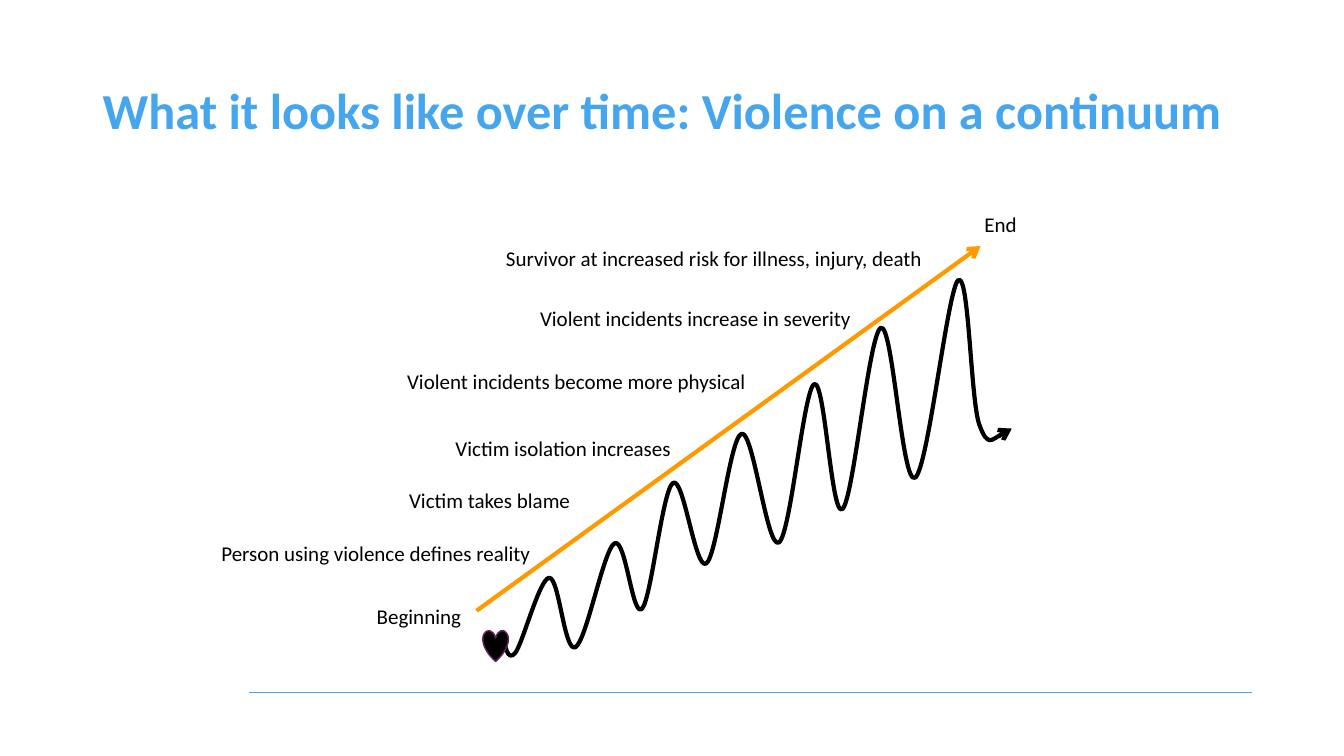
from dataclasses import dataclass

from lxml import etree
from pptx import Presentation
from pptx.dml.color import RGBColor
from pptx.enum.shapes import MSO_CONNECTOR, MSO_SHAPE
from pptx.enum.text import MSO_ANCHOR, MSO_AUTO_SIZE, PP_ALIGN
from pptx.oxml.ns import qn
from pptx.util import Cm, Pt

STRAIGHT = MSO_CONNECTOR.STRAIGHT
HEART = MSO_SHAPE.HEART
MIDDLE = MSO_ANCHOR.MIDDLE
FIT_SHAPE = MSO_AUTO_SIZE.SHAPE_TO_FIT_TEXT
LEFT, RIGHT = PP_ALIGN.LEFT, PP_ALIGN.RIGHT


@dataclass(frozen=True)
class Theme:
    font: str = "Calibri"
    title_size: float = 36
    label_size: float = 15
    rule_width: float = 0.5
    heart_width: float = 1
    curve_width: float = 3
    blue: RGBColor = RGBColor(0x45, 0xA5, 0xED)
    orange: RGBColor = RGBColor(0xFF, 0x99, 0x00)
    black: RGBColor = RGBColor(0x00, 0x00, 0x00)
    purple: RGBColor = RGBColor(0x6C, 0x1D, 0x6A)


THEME = Theme()

# Boxes are left, top, width, height in centimetres
TITLE_BOX = (2.34, 1.02, 29.21, 3.68)
DIAGRAM_BOX = (5.33, 5.21, 20.65, 11.46)
RULE_BOX = (6.27, 17.45, 25.27, 0)
LABEL_HEIGHT = 0.89

# Stages: text, then left, top and width inside the diagram
STAGES = [
    ("Survivor at increased risk for illness, injury, death", 7.17, 0.84, 11.13),
    ("Violent incidents increase in severity", 8.03, 2.36, 8.43),
    ("Violent incidents become more physical", 4.68, 3.96, 9.14),
    ("Victim isolation increases", 5.9, 5.64, 6.02),
    ("Victim takes blame", 4.73, 6.96, 4.62),
    ("Person using violence defines reality", 0, 8.28, 8.38),
]

# Turning points of the wave: x, y, then the reach of the handle on each side
WAVE = [
    (7.32, 10.67, 0.07, 0.4), (7.65, 11.25, 0.19, -0.22),
    (8.51, 9.35, 0.25, -0.03), (9.17, 11.1, 0.28, -0.14),
    (10.16, 8.48, 0.28, -0.15), (10.85, 10.13, 0.24, -0.26),
    (11.63, 6.96, 0.27, -0.19), (12.47, 8.99, 0.28, -0.2),
    (13.36, 5.72, 0.3, -0.09), (14.3, 8.46, 0.3, -0.2),
    (15.19, 4.47, 0.27, -0.14), (15.9, 7.62, 0.28, -0.23),
    (16.87, 3.05, 0.3, -0.13), (17.73, 6.83, 0.33, -0.2),
    (18.82, 1.85, 0.27, -0.21), (19.35, 5.49, 0.22, 0.62),
    (20.17, 5.59, 0, 0),
]


def add_text(page, text, box, size, color, bold=False, align=LEFT):
    shape = page.shapes.add_textbox(*map(Cm, box))
    shape.text_frame.text = text
    para = shape.text_frame.paragraphs[0]
    para.alignment = align
    font = para.runs[0].font
    font.name, font.size, font.bold = THEME.font, Pt(size), bold
    font.color.rgb = color
    return shape


def add_label(page, text, box, wrap=False, align=LEFT):
    label = add_text(page, text, box, THEME.label_size, THEME.black, align=align)
    label.text_frame.word_wrap = wrap
    label.text_frame.auto_size = FIT_SHAPE


def style_line(line, color, width):
    line.color.rgb = color
    line.width = Pt(width)


def add_arrowhead(line):
    outline = line._get_or_add_ln()
    etree.SubElement(outline, qn("a:tailEnd"), type="arrow")


def add_line(page, start, end, color, width):
    connector = page.shapes.add_connector(STRAIGHT, *map(Cm, start + end))
    style_line(connector.line, color, width)
    etree.SubElement(connector._element.spPr, qn("a:effectLst"))
    return connector


def curve_segments(shape):
    """Turn each three straight segments into one cubic curve."""
    outline = next(shape._element.iter(qn("a:path")))
    segments = outline.findall(qn("a:lnTo"))
    for first in range(0, len(segments), 3):
        curve = etree.Element(qn("a:cubicBezTo"))
        outline.replace(segments[first], curve)
        for segment in segments[first:first + 3]:
            curve.append(segment[0])
        for segment in segments[first + 1:first + 3]:
            outline.remove(segment)


def draw_title(page, box):
    title = add_text(page, "What it looks like over time: Violence on a continuum",
                     box, THEME.title_size, THEME.blue, bold=True)
    title.text_frame.word_wrap = True
    title.text_frame.vertical_anchor = MIDDLE
    title.text_frame.paragraphs[0].line_spacing = 0.9


def draw_rule(page, box):
    left, top, width, height = box
    add_line(page, (left, top), (left + width, top + height),
             THEME.blue, THEME.rule_width)


def draw_wave(page, left, top):
    points = []
    for x, y, reach_x, reach_y in WAVE:
        for side in (-1, 0, 1):
            points.append((Cm(left + x + side * reach_x),
                           Cm(top + y + side * reach_y)))
    # The ends have a handle on one side only
    start, *rest = points[1:-1]
    builder = page.shapes.build_freeform(*start)
    builder.add_line_segments(rest, close=False)
    wave = builder.convert_to_shape()
    curve_segments(wave)
    wave.shadow.inherit = False
    wave.fill.background()
    style_line(wave.line, THEME.black, THEME.curve_width)
    add_arrowhead(wave.line)


def draw_diagram(page, box):
    left, top = box[:2]

    # Stage labels
    for text, x, y, width in STAGES:
        add_label(page, text, (left + x, top + y, width, LABEL_HEIGHT))

    # Rising trend with its two ends
    trend = add_line(page, (left + 6.68, top + 10.18), (left + 19.38, top + 0.99),
                     THEME.orange, THEME.curve_width)
    add_arrowhead(trend.line)
    add_label(page, "End", (left + 19.23, top, 1.42, LABEL_HEIGHT), wrap=True)
    add_label(page, "Beginning", (left + 3.03, top + 9.88, 3.51, LABEL_HEIGHT),
              wrap=True, align=RIGHT)

    # Wave of incidents, starting at the heart
    draw_wave(page, left, top)
    heart = page.shapes.add_shape(
        HEART, Cm(left + 6.84), Cm(top + 10.67), Cm(0.64), Cm(0.79))
    heart.shadow.inherit = False
    heart.fill.solid()
    heart.fill.fore_color.rgb = THEME.black
    style_line(heart.line, THEME.purple, THEME.heart_width)


def main():
    deck = Presentation()
    deck.slide_width, deck.slide_height = Cm(33.87), Cm(19.05)
    page = deck.slides.add_slide(deck.slide_layouts[6])
    draw_rule(page, RULE_BOX)
    draw_diagram(page, DIAGRAM_BOX)
    draw_title(page, TITLE_BOX)
    deck.save("out.pptx")


if __name__ == "__main__":
    main()
